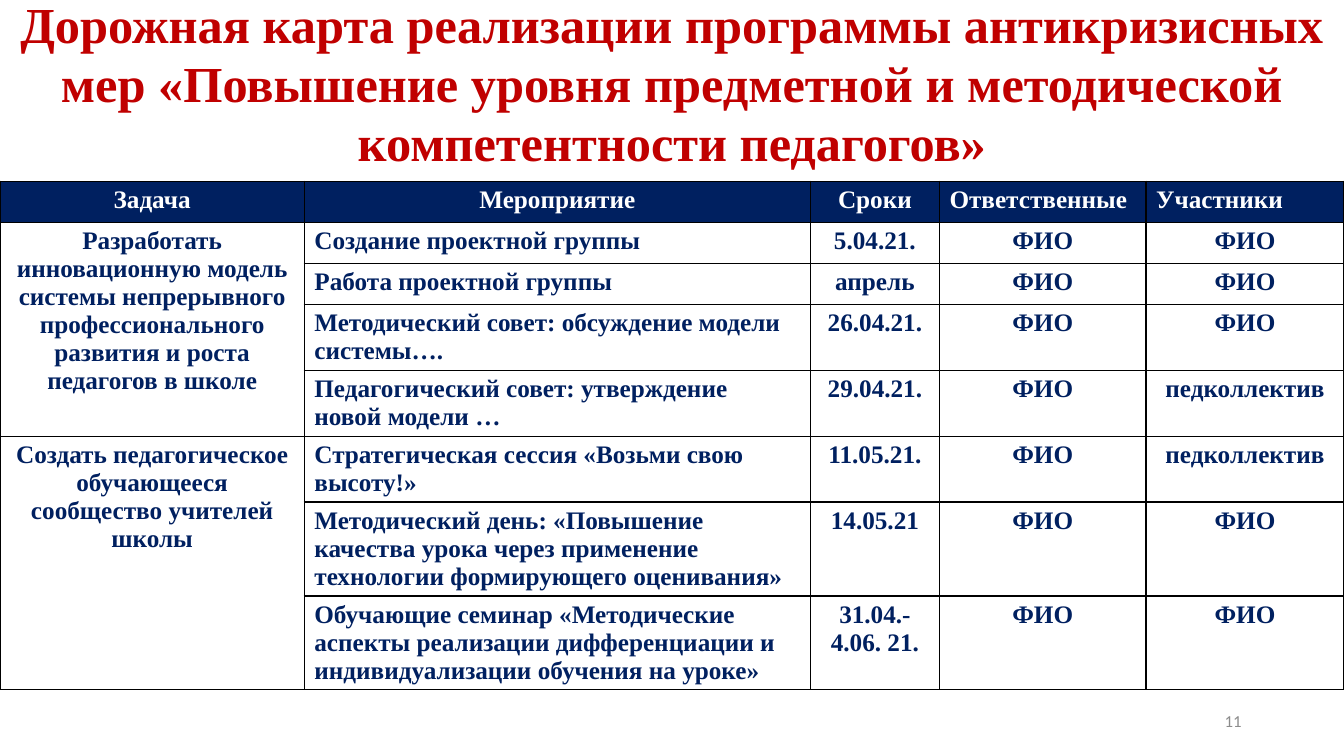
"""Build the roadmap slide: a title, a table of tasks and a page number."""
from lxml import etree
from pptx import Presentation
from pptx.dml.color import RGBColor
from pptx.enum.text import MSO_ANCHOR, MSO_AUTO_SIZE, PP_ALIGN
from pptx.oxml.ns import qn
from pptx.util import Pt

LEFT, MID, RIGHT = PP_ALIGN.LEFT, PP_ALIGN.CENTER, PP_ALIGN.RIGHT
CENTER = MSO_ANCHOR.MIDDLE
NOFIT = MSO_AUTO_SIZE.NONE

THEME = {
    "red": RGBColor(0xC0, 0x00, 0x00),
    "navy": RGBColor(0x00, 0x20, 0x60),
    "white": RGBColor(0xFF, 0xFF, 0xFF),
    "gray": RGBColor(0x8C, 0x8C, 0x8C),
    "line": "000000",
    "serif": "Times New Roman",
    "sans": "Calibri",
    "head": Pt(36),
    "cell": Pt(18),
    "page": Pt(12),
}


def write(frame, text, align, color, **form):
    """Fill a text frame with one formatted paragraph."""
    para = frame.paragraphs[0]
    para.alignment = align
    run = para.add_run()
    run.text = text
    run.font.color.rgb = THEME[color]
    for key, value in form.items():
        setattr(run.font, key, value)
    return para


def border(cell):
    """Draw a thin line on each side of a cell."""
    props = cell._tc.get_or_add_tcPr()
    for side in ("a:lnL", "a:lnR", "a:lnT", "a:lnB"):
        line = etree.SubElement(props, qn(side), w=str(Pt(1)))
        fill = etree.SubElement(line, qn("a:solidFill"))
        etree.SubElement(fill, qn("a:srgbClr"), val=THEME["line"])


deck = Presentation()
deck.slide_width, deck.slide_height = Pt(960), Pt(540)
slide = deck.slides.add_slide(deck.slide_layouts[5])

title = slide.shapes.title
place = {"left": Pt(0), "top": Pt(5), "width": Pt(960), "height": Pt(111)}
for key, value in place.items():
    setattr(title, key, value)
frame = title.text_frame
for key, value in {"vertical_anchor": CENTER, "word_wrap": True, "auto_size": NOFIT}.items():
    setattr(frame, key, value)
head = write(
    frame,
    "Дорожная карта реализации программы антикризисных мер "
    "«Повышение уровня предметной и методической компетентности педагогов»",
    MID, "red", size=THEME["head"], name=THEME["serif"], bold=True,
)
head.line_spacing = 0.98

FIO, STAFF = "ФИО", "педколлектив"
TASKS = [
    "Разработать инновационную модель системы непрерывного "
    "профессионального развития и роста педагогов в школе",
    "Создать педагогическое обучающееся сообщество учителей школы",
]
ROWS = [
    ("Задача", "Мероприятие", "Сроки", "Ответственные", "Участники"),
    (TASKS[0], "Создание проектной группы", "5.04.21.", FIO, FIO),
    ("", "Работа проектной группы", "апрель", FIO, FIO),
    ("", "Методический совет: обсуждение модели системы….", "26.04.21.", FIO, FIO),
    ("", "Педагогический совет: утверждение новой модели …", "29.04.21.", FIO, STAFF),
    (TASKS[1], "Стратегическая сессия «Возьми свою высоту!»", "11.05.21.", FIO, STAFF),
    ("", "Методический день: «Повышение качества урока через применение "
     "технологии формирующего оценивания»", "14.05.21", FIO, FIO),
    ("", "Обучающие семинар «Методические аспекты реализации дифференциации "
     "и индивидуализации обучения на уроке»", "31.04.- 4.06. 21.", FIO, FIO),
]
WIDTHS = [217.4, 361.5, 92.2, 147.6, 141.3]
HEIGHTS = [29.3] * 3 + [47.1] * 3 + [67.1] * 2
HEAD = [MID, MID, MID, LEFT, LEFT]
BODY = [MID, LEFT, MID, MID, MID]

grid = slide.shapes.add_table(
    len(ROWS), len(WIDTHS), Pt(0), Pt(129.5), Pt(960), Pt(sum(HEIGHTS))
).table
for col, width in zip(grid.columns, WIDTHS):
    col.width = Pt(width)
for row, height in zip(grid.rows, HEIGHTS):
    row.height = Pt(height)
for first, last in ((1, 4), (5, 7)):
    grid.cell(first, 0).merge(grid.cell(last, 0))

for r, texts in enumerate(ROWS):
    aligns, ink, back = (BODY, "navy", "white") if r else (HEAD, "white", "navy")
    for c, text in enumerate(texts):
        cell = grid.cell(r, c)
        border(cell)
        cell.fill.solid()
        cell.fill.fore_color.rgb = THEME[back]
        if text:
            write(cell.text_frame, text, aligns[c], ink,
                  size=THEME["cell"], name=THEME["serif"], bold=True)

page = slide.shapes.add_textbox(Pt(678), Pt(500.5), Pt(216), Pt(28.8)).text_frame
page.word_wrap = True
page.vertical_anchor = CENTER
write(page, "11", RIGHT, "gray", size=THEME["page"], name=THEME["sans"])

deck.save("out.pptx")
